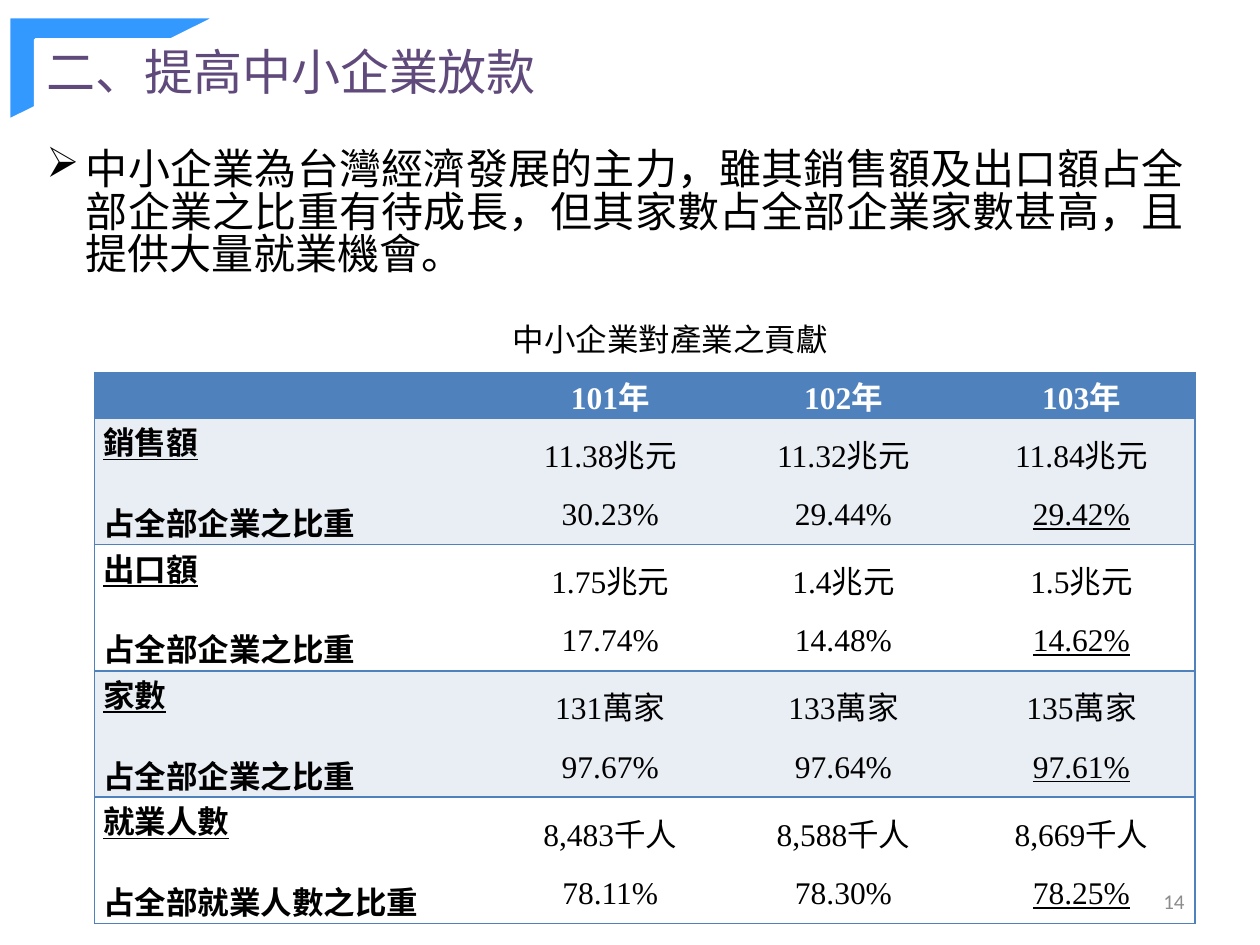
from lxml.etree import SubElement
from pptx import Presentation
from pptx.dml.color import RGBColor
from pptx.enum.shapes import MSO_SHAPE
from pptx.enum.text import MSO_ANCHOR, PP_ALIGN
from pptx.oxml import parse_xml
from pptx.oxml.ns import nsdecls, qn
from pptx.util import Pt

WHITE = RGBColor(0xFF, 0xFF, 0xFF)
BLACK = RGBColor(0, 0, 0)
ACCENT = RGBColor(0x33, 0x99, 0xFF)
PURPLE = RGBColor(0x60, 0x4A, 0x7B)
GREY = RGBColor(0x8C, 0x8C, 0x8C)
TABLE_BLUE = RGBColor(0x4F, 0x81, 0xBD)
BAND = RGBColor(0xE9, 0xED, 0xF4)

CJK = "Noto Sans CJK SC"
SERIF = "Times New Roman"
SHARE = "占全部企業之比重"
COLUMN_WIDTHS = [232.5, 124.5, 142, 130]
YEARS = ["101年", "102年", "103年"]
MEASURES = [
    ("銷售額", SHARE, ["11.38兆元", "11.32兆元", "11.84兆元"], ["30.23%", "29.44%", "29.42%"]),
    ("出口額", SHARE, ["1.75兆元", "1.4兆元", "1.5兆元"], ["17.74%", "14.48%", "14.62%"]),
    ("家數", SHARE, ["131萬家", "133萬家", "135萬家"], ["97.67%", "97.64%", "97.61%"]),
    ("就業人數", "占全部就業人數之比重", ["8,483千人", "8,588千人", "8,669千人"],
     ["78.11%", "78.30%", "78.25%"]),
]


def apply_formats(target, formats):
    for name, value in formats.items():
        setattr(target, name, value)


def write(paragraph, wording, color, font, layout):
    apply_formats(paragraph, layout)
    run = paragraph.add_run()
    run.text = wording
    run.font.color.rgb = color
    apply_formats(run.font, font)
    SubElement(run.font._element, qn("a:ea"), typeface=CJK)


def add_text(slide, box, wording, color, font, layout, anchor=MSO_ANCHOR.MIDDLE):
    frame = slide.shapes.add_textbox(*map(Pt, box)).text_frame
    apply_formats(frame, {"word_wrap": True, "vertical_anchor": anchor})
    write(frame.paragraphs[0], wording, color, font, layout)
    return frame.paragraphs[0]


def add_arrow_bullet(paragraph, indent):
    properties = paragraph._p.get_or_add_pPr()
    properties.set("marL", str(Pt(indent)))
    properties.set("indent", str(-Pt(indent)))
    SubElement(properties, qn("a:buChar"), char="➢")


def add_corner(slide):
    corner = slide.shapes.add_shape(MSO_SHAPE.HALF_FRAME, Pt(5), Pt(9.5), Pt(119.5), Pt(59.5))
    corner.adjustments[0] = 0.224
    corner.adjustments[1] = 0.258
    corner.shadow.inherit = False
    corner.fill.solid()
    corner.fill.fore_color.rgb = ACCENT
    corner.line.color.rgb = WHITE
    corner.line.width = Pt(2)


def format_cell(cell, fill, anchor, outer_sides):
    apply_formats(cell, {"margin_left": Pt(5), "margin_right": Pt(5), "margin_top": 0,
                         "margin_bottom": 0, "vertical_anchor": anchor})
    cell.fill.solid()
    cell.fill.fore_color.rgb = fill
    for position, side in enumerate("LRTB"):
        paint = "<a:noFill/>"
        if side in outer_sides:
            paint = f'<a:solidFill><a:srgbClr val="{TABLE_BLUE}"/></a:solidFill>'
        border = f'<a:ln{side} {nsdecls("a")} w="{Pt(1)}">{paint}</a:ln{side}>'
        cell._tc.get_or_add_tcPr().insert(position, parse_xml(border))


def write_label(cell, measure, share):
    font = {"name": SERIF, "size": Pt(18), "bold": True}
    layout = {"alignment": PP_ALIGN.JUSTIFY}
    frame = cell.text_frame
    write(frame.paragraphs[0], measure, BLACK, {**font, "underline": True}, layout)
    write(frame.add_paragraph(), share, BLACK, font, {**layout, "space_before": Pt(20)})


def write_values(cell, amount, percent, underline):
    font = {"name": SERIF, "size": Pt(18), "bold": False}
    layout = {"alignment": PP_ALIGN.CENTER, "space_after": Pt(6)}
    spaced = {**layout, "space_before": Pt(6)}
    frame = cell.text_frame
    write(frame.paragraphs[0], amount, BLACK, font, layout)
    write(frame.add_paragraph(), percent, BLACK, {**font, "underline": underline}, spaced)


def add_contribution_table(slide):
    row_heights = [26] + [72] * len(MEASURES)
    table = slide.shapes.add_table(len(row_heights), len(COLUMN_WIDTHS), Pt(54), Pt(213),
                                   Pt(sum(COLUMN_WIDTHS)), Pt(sum(row_heights))).table
    table.horz_banding = False
    for column, width in zip(table.columns, COLUMN_WIDTHS):
        column.width = Pt(width)
    last = len(YEARS)
    for index, (row, height) in enumerate(zip(table.rows, row_heights)):
        row.height = Pt(height)
        fill = TABLE_BLUE if index == 0 else BAND if index % 2 else WHITE
        for place, cell in enumerate(row.cells):
            anchor = MSO_ANCHOR.MIDDLE if place else MSO_ANCHOR.TOP
            format_cell(cell, fill, anchor, "TB" + {0: "L", last: "R"}.get(place, ""))

    for place, year in enumerate(YEARS, 1):
        write(table.cell(0, place).text_frame.paragraphs[0], year, WHITE,
              {"name": SERIF, "size": Pt(18), "bold": True}, {"alignment": PP_ALIGN.CENTER})
    for index, (measure, share, amounts, percents) in enumerate(MEASURES, 1):
        write_label(table.cell(index, 0), measure, share)
        for place, (amount, percent) in enumerate(zip(amounts, percents), 1):
            write_values(table.cell(index, place), amount, percent, place == last)


def main():
    deck = Presentation()
    deck.slide_width, deck.slide_height = Pt(720), Pt(540)
    slide = deck.slides.add_slide(deck.slide_layouts[6])
    add_corner(slide)
    add_contribution_table(slide)
    add_text(slide, (19.5, 20, 323, 41), "二、提高中小企業放款", PURPLE,
             {"name": CJK, "size": Pt(28)}, {}, MSO_ANCHOR.TOP)
    statement = add_text(
        slide, (19.5, 71.5, 664.5, 102),
        "中小企業為台灣經濟發展的主力，雖其銷售額及出口額占全部企業之比重有待成長，"
        "但其家數占全部企業家數甚高，且提供大量就業機會。",
        BLACK, {"name": CJK, "size": Pt(24)},
        {"alignment": PP_ALIGN.JUSTIFY, "line_spacing": 0.84})
    add_arrow_bullet(statement, 22.5)
    add_text(slide, (516, 500.5, 168, 29), "14", GREY,
             {"name": "Calibri", "size": Pt(12)}, {"alignment": PP_ALIGN.RIGHT})
    add_text(slide, (241, 179.5, 284, 28), "中小企業對產業之貢獻", BLACK,
             {"name": CJK, "size": Pt(18)}, {"alignment": PP_ALIGN.CENTER})
    deck.save("out.pptx")


if __name__ == "__main__":
    main()
